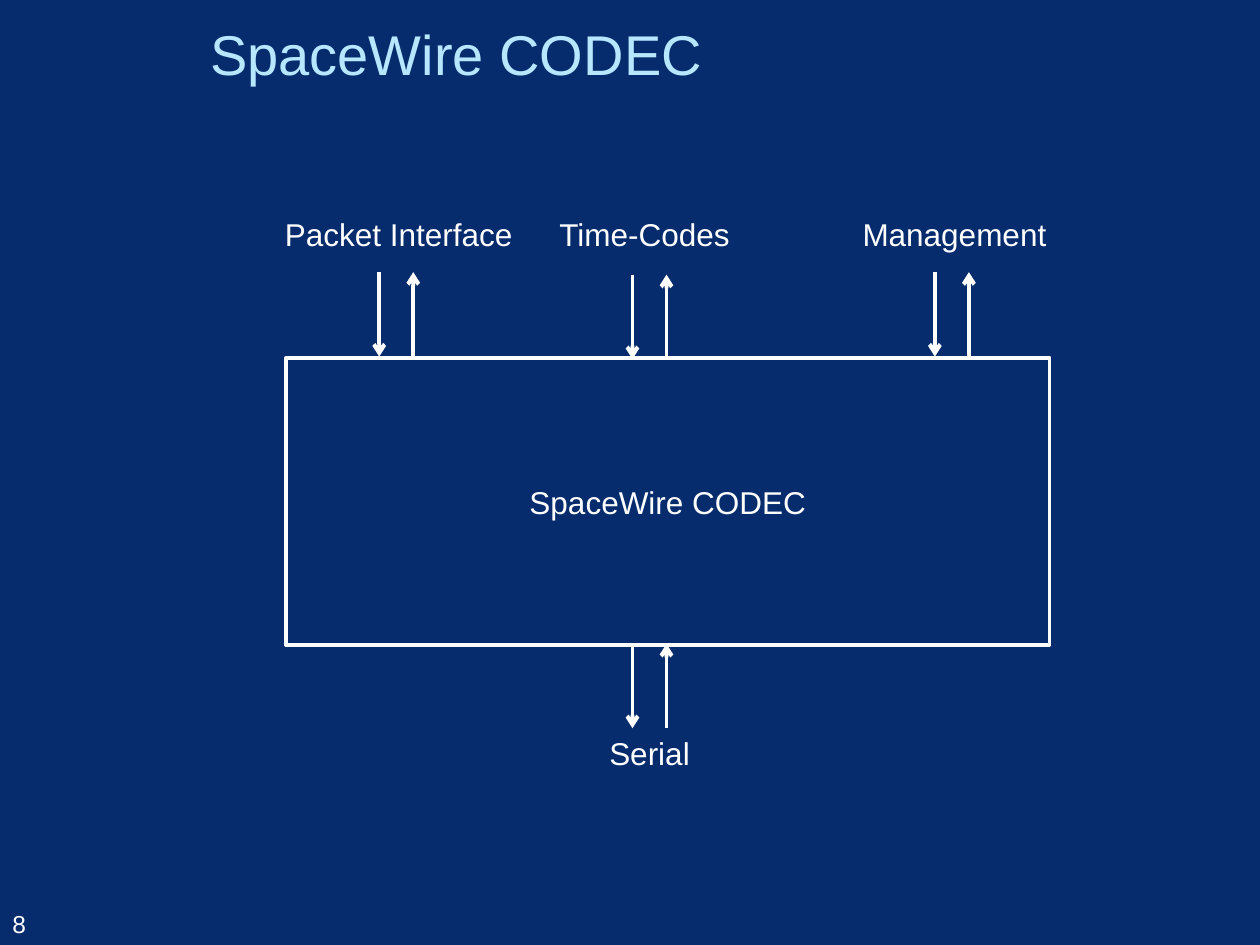
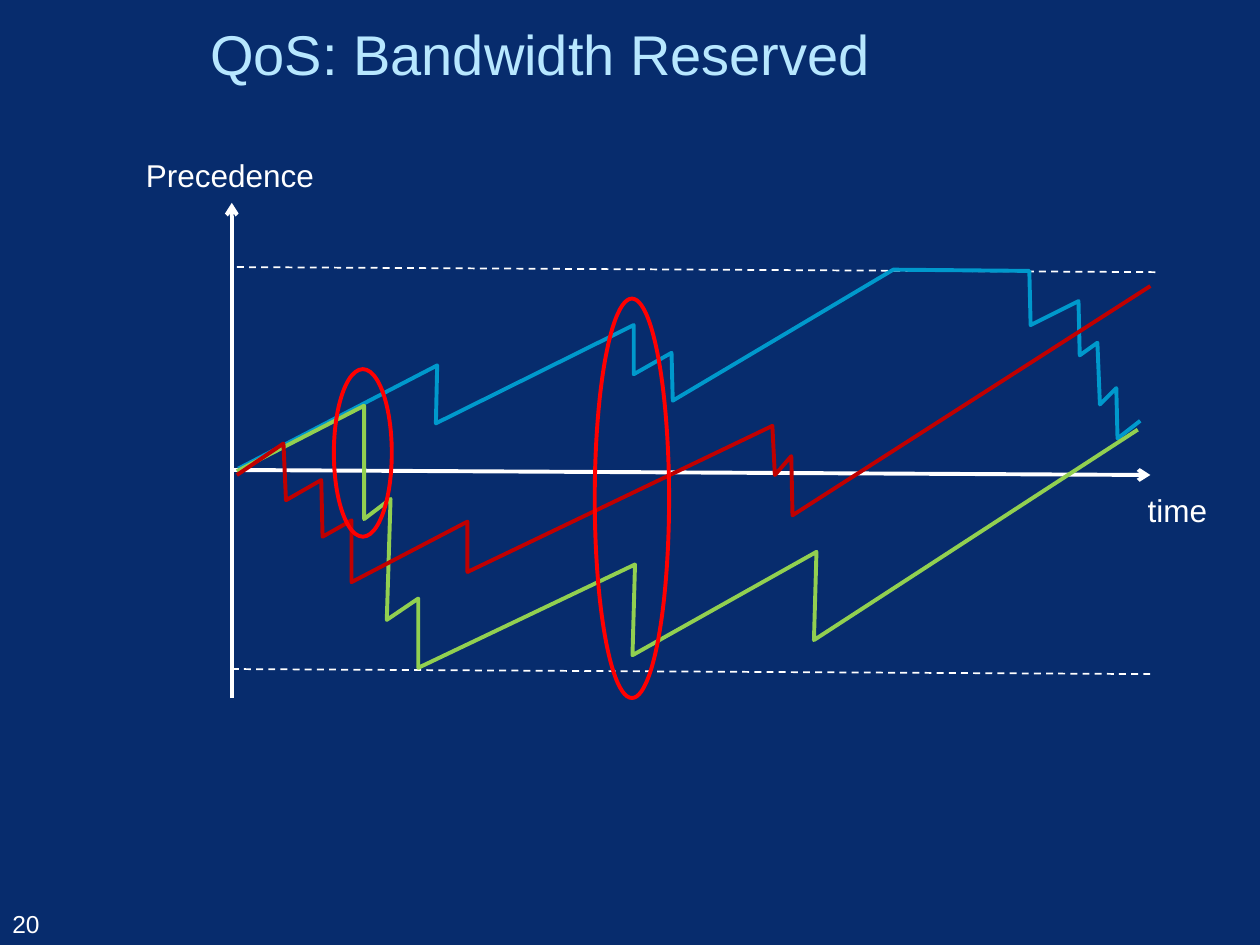
from typing import NamedTuple

from lxml import etree
from pptx import Presentation
from pptx import util as u
from pptx.dml.color import RGBColor
from pptx.enum import dml, shapes, text
from pptx.oxml.ns import qn

NAVY = RGBColor(0x07, 0x2C, 0x6D)
WHITE = RGBColor(0xFF, 0xFF, 0xFF)
PALE = RGBColor(0xB7, 0xE7, 0xFF)
BLUE = RGBColor(0x00, 0x99, 0xCC)
GREEN = RGBColor(0x92, 0xD0, 0x50)
DARK = RGBColor(0xC0, 0x00, 0x00)
RED = RGBColor(0xFF, 0x00, 0x00)
FONT = "Arial"
THICK, THIN = 2.25, 1
GAP, REACH = 0.27, 0.67  # between paired arrows, and their length
CENTER = text.PP_ALIGN.CENTER


class Box(NamedTuple):
    left: float
    top: float
    width: float
    height: float


class Port(NamedTuple):
    name: str
    label: Box
    left: float
    top: float


class Trace(NamedTuple):
    color: RGBColor
    points: list[tuple[float, float]]


PORTS = [
    Port("Packet Interface", Box(2.15, 1.66, 2.03, 0.4), 3.01, 2.16),
    Port("Time-Codes", Box(4.33, 1.66, 1.57, 0.4), 5.02, 2.18),
    Port("Management", Box(6.74, 1.66, 1.67, 0.4), 7.42, 2.16),
    Port("Serial", Box(4.73, 5.78, 0.85, 0.4), 5.02, 5.11),
]

TRACES = [
    Trace(BLUE, [
        (1.89, 3.72), (3.47, 2.9), (3.46, 3.36), (5.03, 2.58), (5.03, 2.97),
        (5.33, 2.8), (5.34, 3.18), (7.09, 2.14), (8.17, 2.15), (8.18, 2.58),
        (8.56, 2.39), (8.57, 2.82), (8.71, 2.72), (8.73, 3.21), (8.86, 3.08),
        (8.87, 3.48), (9.05, 3.34)]),
    Trace(GREEN, [
        (1.88, 3.74), (2.89, 3.22), (2.89, 4.12), (3.1, 3.96), (3.07, 4.92),
        (3.32, 4.75), (3.32, 5.3), (5.04, 4.48), (5.02, 5.2), (6.48, 4.38),
        (6.46, 5.08), (9.03, 3.41)]),
    Trace(DARK, [
        (1.88, 3.77), (2.25, 3.52), (2.27, 3.97), (2.55, 3.81), (2.56, 4.26),
        (2.79, 4.13), (2.79, 4.62), (3.71, 4.14), (3.71, 4.54), (6.13, 3.38),
        (6.15, 3.77), (6.28, 3.62), (6.29, 4.09), (9.13, 2.27)]),
]

RINGS = [Box(2.65, 2.93, 0.46, 1.33), Box(4.72, 2.37, 0.59, 3.17)]


def place(box: Box) -> list[u.Length]:
    return [u.Inches(side) for side in box]


def write(frame, words: str, *, size=18, color=WHITE, align=None,
          anchor=text.MSO_ANCHOR.TOP, wrap=True) -> None:
    frame.word_wrap = wrap
    frame.vertical_anchor = anchor
    para = frame.paragraphs[0]
    para.alignment = align
    run = para.add_run()
    run.text = words
    run.font.name, run.font.size = FONT, u.Pt(size)
    run.font.color.rgb = color


def label(slide, words: str, box: Box, **style) -> None:
    write(slide.shapes.add_textbox(*place(box)).text_frame, words, **style)


def trim(shape, color: RGBColor) -> None:
    """Leave only a plain thick outline."""
    shape.shadow.inherit = False
    shape.fill.background()
    shape.line.color.rgb = color
    shape.line.width = u.Pt(THICK)


def outline(slide, kind, box: Box, color: RGBColor):
    shape = slide.shapes.add_shape(kind, *place(box))
    trim(shape, color)
    return shape


def rule(slide, start: tuple, end: tuple, *, arrow=True) -> None:
    """Draw an arrow, or a thin dashed line."""
    ends = [u.Inches(value) for value in (*start, *end)]
    wire = slide.shapes.add_connector(shapes.MSO_CONNECTOR.STRAIGHT, *ends)
    wire.line.color.rgb = WHITE
    wire.line.width = u.Pt(THICK if arrow else THIN)
    props = wire.element.spPr
    if arrow:
        etree.SubElement(props.find(qn("a:ln")), qn("a:tailEnd"), type="arrow")
    else:
        wire.line.dash_style = dml.MSO_LINE.DASH
    etree.SubElement(props, qn("a:effectLst"))


def pair(slide, port: Port) -> None:
    right, base = port.left + GAP, port.top + REACH
    rule(slide, (port.left, port.top), (port.left, base))
    rule(slide, (right, base), (right, port.top))
    label(slide, port.name, port.label, align=CENTER, wrap=False)


def plot(slide, trace: Trace) -> None:
    first, *rest = [(u.Inches(x), u.Inches(y)) for x, y in trace.points]
    pen = slide.shapes.build_freeform(*first)
    pen.add_line_segments(rest, close=False)
    trim(pen.convert_to_shape(), trace.color)


def start(deck, title: str, number: int):
    """Add a slide with the shared background, title and page number."""
    slide = deck.slides.add_slide(deck.slide_layouts[6])
    slide.background.fill.solid()
    slide.background.fill.fore_color.rgb = NAVY
    label(slide, title, Box(1.57, 0, 8.43, 0.84), size=32, color=PALE,
          anchor=text.MSO_ANCHOR.MIDDLE)
    label(slide, str(number), Box(0, 6.98, 1.06, 0.52), size=14,
          anchor=text.MSO_ANCHOR.BOTTOM)
    return slide


def codec(deck) -> None:
    slide = start(deck, "SpaceWire CODEC", 8)
    block = outline(slide, shapes.MSO_SHAPE.RECTANGLE,
                    Box(2.27, 2.84, 6.06, 2.28), WHITE)
    write(block.text_frame, "SpaceWire CODEC", align=CENTER,
          anchor=text.MSO_ANCHOR.MIDDLE)
    for port in PORTS:
        pair(slide, port)


def quality(deck) -> None:
    slide = start(deck, "QoS: Bandwidth Reserved", 20)
    # Time axis and precedence limits
    rule(slide, (1.84, 3.73), (9.13, 3.77))
    label(slide, "time", Box(9.01, 3.85, 0.68, 0.4), wrap=False)
    rule(slide, (1.88, 2.12), (9.17, 2.16), arrow=False)
    rule(slide, (1.84, 5.31), (9.13, 5.35), arrow=False)
    # Precedence of each channel
    for trace in TRACES:
        plot(slide, trace)
    # Precedence axis
    rule(slide, (1.84, 5.54), (1.84, 1.61))
    label(slide, "Precedence", Box(1.06, 1.19, 1.58, 0.4))
    # Highlighted moments
    for ring in RINGS:
        outline(slide, shapes.MSO_SHAPE.OVAL, ring, RED)


def main() -> None:
    deck = Presentation()
    deck.slide_width, deck.slide_height = u.Inches(10), u.Inches(7.5)
    codec(deck)
    quality(deck)
    deck.save("out.pptx")


if __name__ == "__main__":
    main()
